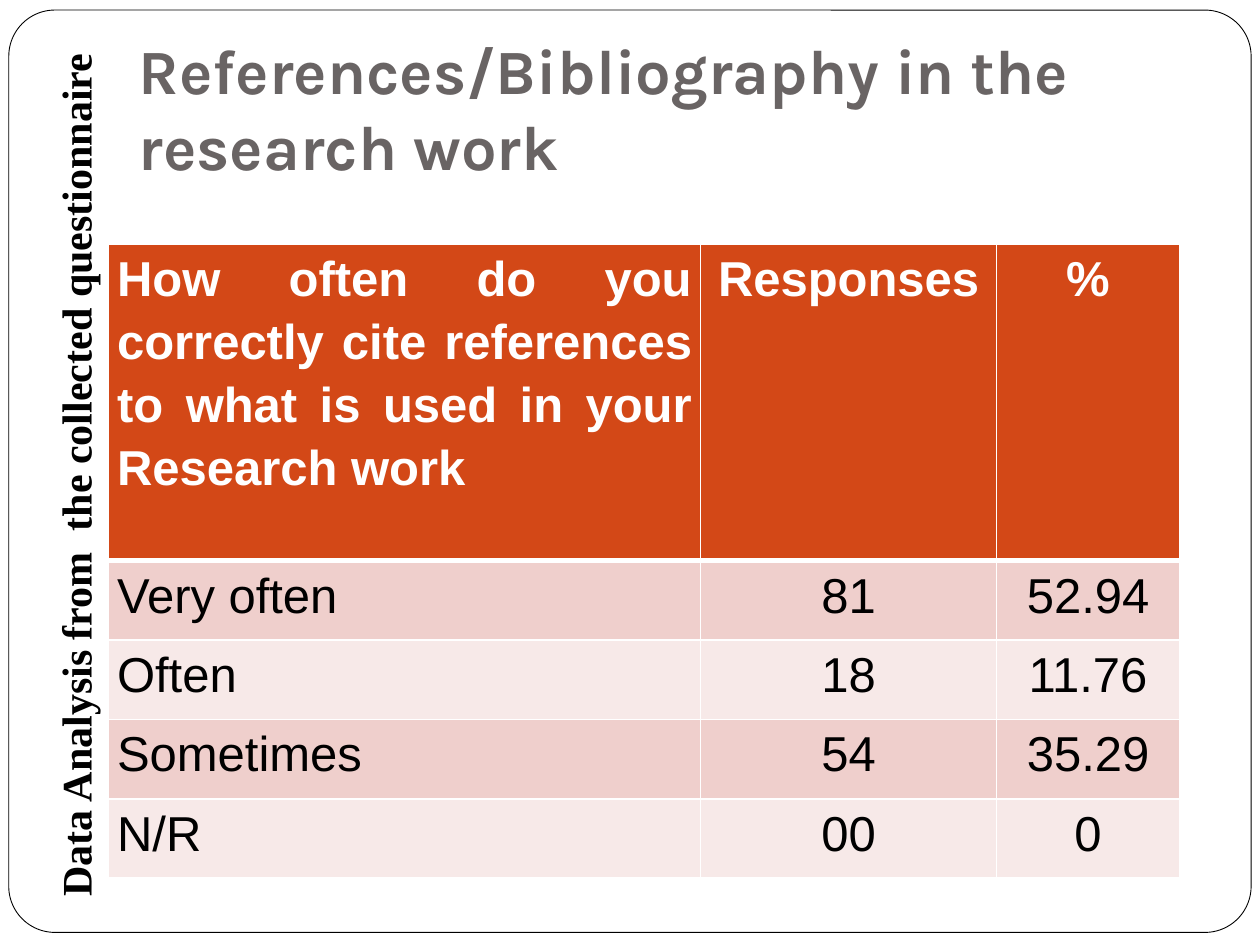
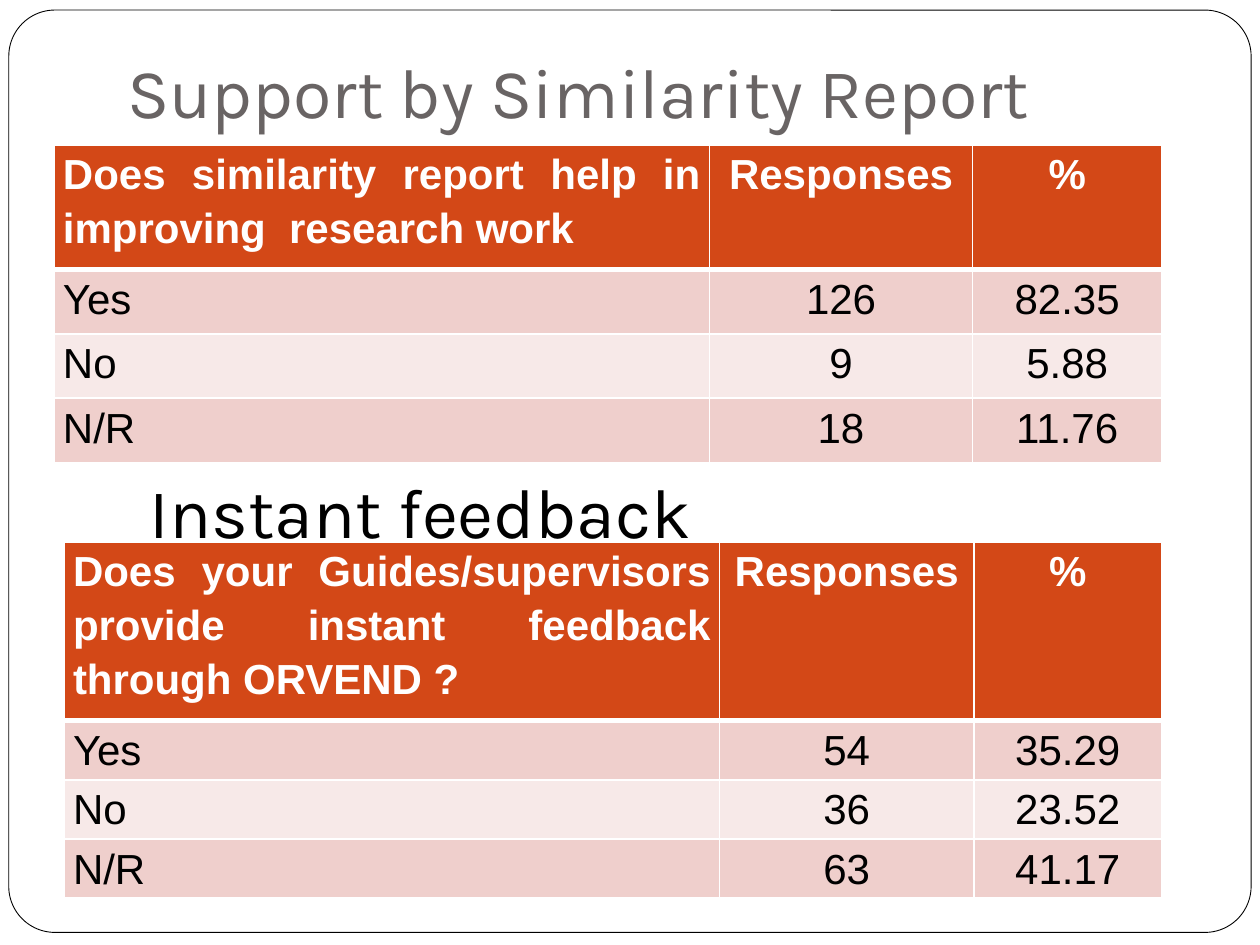
from lxml import etree
from pptx import Presentation
from pptx import util as u
from pptx.dml.color import RGBColor
from pptx.enum import shapes, text
from pptx.oxml import ns

COLORS = {
    "paper": "FFFFFF",
    "ink": "000000",
    "heading": "696464",
    "header": "D34817",
    "odd": "EFCFCC",
    "even": "F7E9E8",
}
GRID_COLUMNS, GRID_ROWS = 100, 75
TITLE_FORMAT = {
    "vertical_anchor": text.MSO_ANCHOR.BOTTOM,
    "auto_size": text.MSO_AUTO_SIZE.NONE,
    "margin_bottom": u.Inches(0.1),
}
LABEL_FORMAT = {"auto_size": text.MSO_AUTO_SIZE.SHAPE_TO_FIT_TEXT, "word_wrap": True}
CELL_FORMAT = {
    "margin_left": u.Inches(0.07),
    "margin_right": u.Inches(0.07),
    "margin_top": 0,
    "margin_bottom": 0,
}


def rgb(color):
    return RGBColor.from_string(COLORS[color])


def apply(target, values):
    for name, value in values.items():
        setattr(target, name, value)


class SurveyDeck:
    def __init__(self):
        self.deck = Presentation()
        apply(self.deck, {"slide_width": u.Inches(10), "slide_height": u.Inches(7.5)})
        self.column = self.deck.slide_width / GRID_COLUMNS
        self.row = self.deck.slide_height / GRID_ROWS
        self.slide = None

    def box(self, left, top, width, height):
        return (round(left * self.column), round(top * self.row),
                round(width * self.column), round(height * self.row))

    def new_slide(self, heading, place, size, bold):
        self.slide = self.deck.slides.add_slide(self.deck.slide_layouts[5])
        self.frame()
        title = self.slide.shapes.title
        apply(title, dict(zip(("left", "top", "width", "height"), self.box(*place))))
        apply(title.text_frame, TITLE_FORMAT)
        self.add_words(title.text_frame, heading, "Karla", size, "heading", bold)

    def frame(self):
        border = self.slide.shapes.add_shape(
            shapes.MSO_SHAPE.ROUNDED_RECTANGLE, *self.box(0.7, 0.8, 98.6, 73.2))
        border.adjustments[0] = 0.05
        border.shadow.inherit = False
        border.fill.solid()
        border.fill.fore_color.rgb = rgb("paper")
        border.line.color.rgb = rgb("ink")
        border.line.width = u.Pt(0.5)
        self.slide.shapes._spTree.insert(2, border._element)

    def add_words(self, frame, words, font, size, color, bold=False,
                  align=text.PP_ALIGN.LEFT, spacing=1.0):
        paragraph = frame.paragraphs[0]
        apply(paragraph, {"alignment": align, "line_spacing": spacing})
        run = paragraph.add_run()
        run.text = words
        apply(run.font, {"name": font, "size": u.Pt(size), "bold": bold})
        run.font.color.rgb = rgb(color)

    def label(self, words, place, font, size, bold=False, rotation=0):
        caption = self.slide.shapes.add_textbox(*self.box(*place))
        caption.rotation = rotation
        apply(caption.text_frame, LABEL_FORMAT)
        self.add_words(caption.text_frame, words, font, size, "ink", bold)

    def borders(self, cell, top, bottom):
        properties = cell._tc.get_or_add_tcPr()
        widths = {"lnL": 1, "lnR": 1, "lnT": top, "lnB": bottom}
        for position, (side, points) in enumerate(widths.items()):
            line = etree.Element(ns.qn("a:" + side), w=str(u.Pt(points)))
            fill = etree.SubElement(line, ns.qn("a:solidFill"))
            etree.SubElement(fill, ns.qn("a:srgbClr"), val=COLORS["paper"])
            properties.insert(position, line)

    def survey(self, question, answers, corner, columns, header_row, answer_row, size):
        rows = [(question, "Responses", "%"), *answers]
        heights = [header_row] + [answer_row] * len(answers)
        place = self.box(*corner, sum(columns), sum(heights))
        table = self.slide.shapes.add_table(len(rows), len(columns), *place).table
        table.horz_banding = False
        for column, width in zip(table.columns, columns):
            column.width = round(width * self.column)
        for row, height in zip(table.rows, heights):
            row.height = round(height * self.row)
        for r, values in enumerate(rows):
            is_header = r == 0
            fill = "header" if is_header else ("even", "odd")[r % 2]
            for c, value in enumerate(values):
                cell = table.cell(r, c)
                apply(cell, CELL_FORMAT)
                cell.fill.solid()
                cell.fill.fore_color.rgb = rgb(fill)
                self.borders(cell, 3 if r == 1 else 1, 3 if is_header else 1)
                align = text.PP_ALIGN.CENTER if c else text.PP_ALIGN.JUSTIFY
                self.add_words(cell.text_frame, value, "Arial", size,
                               "paper" if is_header else "ink", is_header, align, 1.15)


def main():
    survey_deck = SurveyDeck()

    survey_deck.new_slide("References/Bibliography in the research work",
                          (10, 3, 85, 12.5), 36, True)
    survey_deck.survey(
        "How often do you correctly cite references to what is used in your Research work",
        [("Very often", "81", "52.94"), ("Often", "18", "11.76"),
         ("Sometimes", "54", "35.29"), ("N/R", "00", "0")],
        (8.6, 19.4), (47, 23.5, 14.5), 25.1, 6.3, 28)
    survey_deck.label("Data Analysis from  the collected questionnaire",
                      (-29.1, 34.6, 70.1, 5), "Times New Roman", 24, True, 270)

    survey_deck.new_slide("Support by Similarity Report", (9.1, 3, 85.9, 8.5), 40, False)
    survey_deck.survey(
        "Does similarity report help in improving  research work",
        [("Yes", "126", "82.35"), ("No", "9", "5.88"), ("N/R", "18", "11.76")],
        (4.3, 11.5), (52, 20.9, 15), 9.9, 5.1, 24)
    survey_deck.label("Instant feedback", (10.9, 36.7, 58.6, 7.7), "Karla", 40)
    survey_deck.survey(
        "Does your Guides/supervisors provide instant feedback through ORVEND ?",
        [("Yes", "54", "35.29"), ("No", "36", "23.52"), ("N/R", "63", "41.17")],
        (5.1, 43), (52, 20.2, 14.9), 14.2, 4.7, 24)

    survey_deck.deck.save("out.pptx")


if __name__ == "__main__":
    main()
